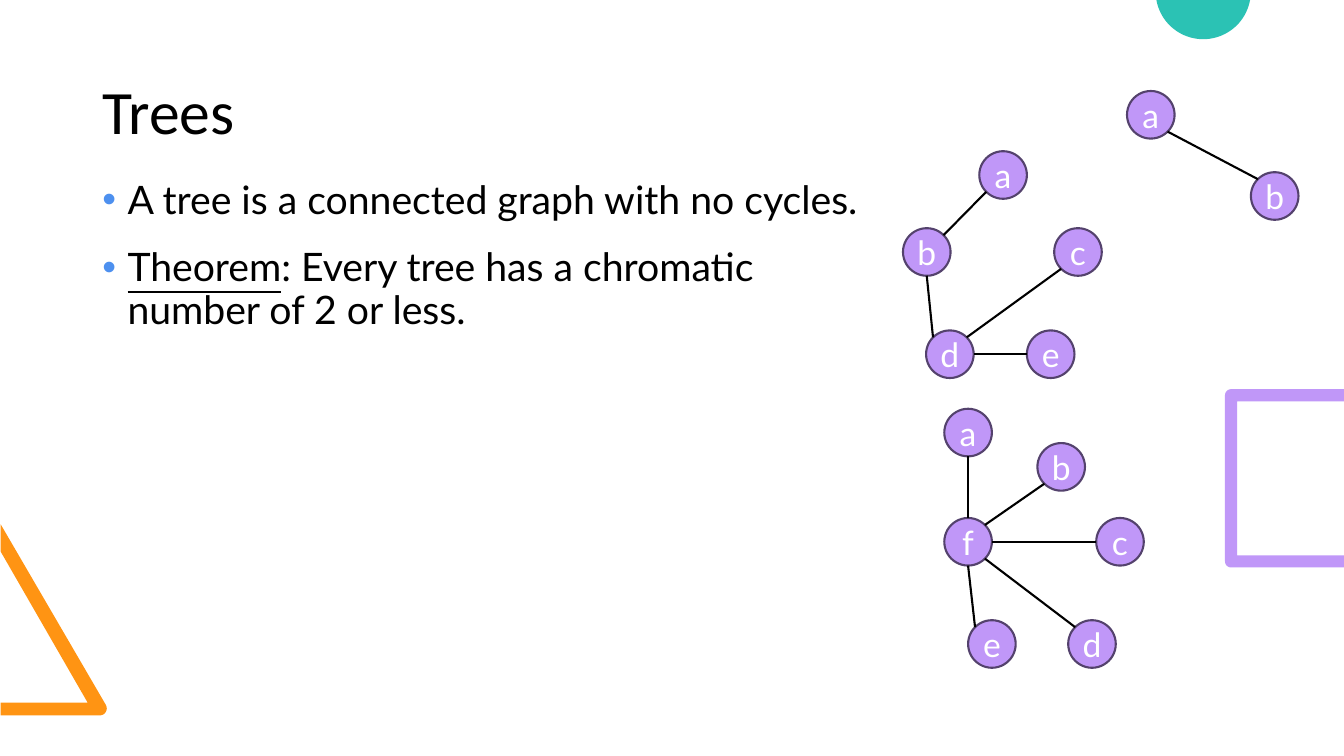
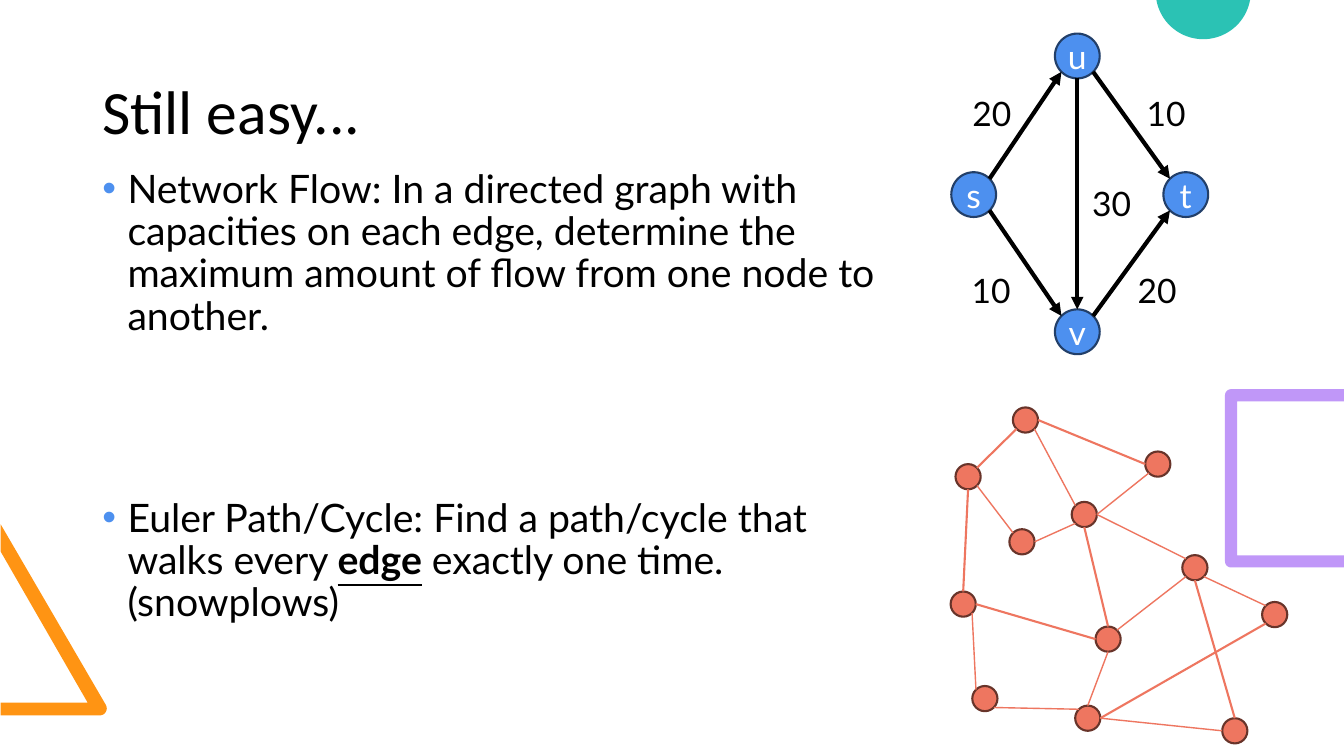
from dataclasses import dataclass
from enum import Enum
from math import cos, radians, sin

from lxml.etree import SubElement
from pptx import Presentation
from pptx.dml.color import RGBColor
from pptx.enum.shapes import MSO_CONNECTOR, MSO_SHAPE
from pptx.enum.text import MSO_ANCHOR, PP_ALIGN
from pptx.oxml.ns import qn
from pptx.slide import Slide
from pptx.text.text import TextFrame
from pptx.util import Pt

Point = tuple[float, float]


@dataclass(frozen=True)
class Theme:
    black: str = "000000"
    white: str = "FFFFFF"
    blue: str = "4D90EF"
    blue_dark: str = "223F69"
    purple: str = "C097F8"
    purple_dark: str = "54426D"
    coral: str = "EE7660"
    coral_dark: str = "68342A"
    orange: str = "FF9413"
    teal: str = "2BC2B4"
    title_font: str = "Calibri"
    body_font: str = "Lato"
    title_size: float = 44
    body_size: float = 28
    label_size: float = 24
    line_spacing: float = 0.9
    space_before: float = 10
    space_after: float = 8
    bullet_indent: float = 18


THEME = Theme()
SLIDE_WIDTH, SLIDE_HEIGHT = 960, 540


class Side(Enum):
    """Place on a node's rim where an edge ends, as a clockwise angle."""
    E = 0
    SE = 45
    S = 90
    SW = 135
    W = 180
    NW = 225
    N = 270
    NE = 315


@dataclass(frozen=True)
class NodeStyle:
    diameter: float
    fill: str
    outline: str
    labelled: bool = True


@dataclass(frozen=True)
class Edge:
    start: str
    start_side: Side
    end: str
    end_side: Side
    width: float = 1.5


@dataclass(frozen=True)
class Graph:
    style: NodeStyle
    nodes: dict[str, Point]
    edges: list[Edge]
    edge_color: str = THEME.black
    directed: bool = False


@dataclass(frozen=True)
class Span:
    text: str
    bold: bool = False
    underline: bool = False


@dataclass(frozen=True)
class Bullet:
    spans: list[Span]
    space_after: float = THEME.space_after


# Shared drawing helpers
def color(value: str) -> RGBColor:
    return RGBColor.from_string(value)


def style_run(run, size: float, font: str = THEME.body_font, ink: str = THEME.black) -> None:
    run.font.size = Pt(size)
    run.font.name = font
    run.font.color.rgb = color(ink)


def arc(center: Point, radius: float, start: int, stop: int, step: int) -> list[Point]:
    return [(center[0] + radius * cos(radians(angle)), center[1] + radius * sin(radians(angle)))
            for angle in range(start, stop + step, step)]


def add_outline(slide: Slide, points: list[Point], fill: str) -> None:
    corners = [(Pt(x), Pt(y)) for x, y in points]
    builder = slide.shapes.build_freeform(*corners[0])
    builder.add_line_segments(corners[1:], close=True)
    shape = builder.convert_to_shape()
    shape.shadow.inherit = False
    shape.fill.solid()
    shape.fill.fore_color.rgb = color(fill)
    shape.line.fill.background()


def add_text_frame(slide: Slide, left: float, top: float, width: float, height: float) -> TextFrame:
    text_frame = slide.shapes.add_textbox(Pt(left), Pt(top), Pt(width), Pt(height)).text_frame
    text_frame.word_wrap = True
    return text_frame


def add_decoration(slide: Slide) -> None:
    # Triangle at lower left
    add_outline(slide, [(0.5, 511), (0.5, 501.8), (62.6, 501.8), (0.5, 394), (0.5, 374.5),
                        *arc((71.3, 506), 5, -30, 90, 15)], THEME.orange)
    # Circle cut by the top edge
    add_outline(slide, arc((859.5, -6), 34, 10, 170, 4), THEME.teal)
    # Frame cut by the right edge
    left, top, bottom, band, radius = 875, 278, 405.4, 8.7, 4.4
    add_outline(slide, [(SLIDE_WIDTH, bottom), *arc((left + radius, bottom - radius), radius, 90, 180, 15),
                        *arc((left + radius, top + radius), radius, 180, 270, 15),
                        (SLIDE_WIDTH, top), (SLIDE_WIDTH, top + band), (left + band, top + band),
                        (left + band, bottom - band), (SLIDE_WIDTH, bottom - band)], THEME.purple)


def add_title(slide: Slide, title: str) -> None:
    text_frame = add_text_frame(slide, 66, 24, 828, 116)
    text_frame.vertical_anchor = MSO_ANCHOR.MIDDLE
    text_frame.text = title
    paragraph = text_frame.paragraphs[0]
    paragraph.line_spacing = THEME.line_spacing
    style_run(paragraph.runs[0], THEME.title_size, THEME.title_font)


def add_bullets(slide: Slide, top: float, width: float, bullets: list[Bullet]) -> None:
    text_frame = add_text_frame(slide, 66, top, width, SLIDE_HEIGHT - top)
    for index, bullet in enumerate(bullets):
        paragraph = text_frame.add_paragraph() if index else text_frame.paragraphs[0]
        paragraph.line_spacing = THEME.line_spacing
        paragraph.space_before = Pt(THEME.space_before)
        paragraph.space_after = Pt(bullet.space_after)
        properties = paragraph._p.get_or_add_pPr()
        properties.set("marL", str(Pt(THEME.bullet_indent)))
        properties.set("indent", str(-Pt(THEME.bullet_indent)))
        SubElement(SubElement(properties, qn("a:buClr")), qn("a:srgbClr"), val=THEME.blue)
        SubElement(properties, qn("a:buFont"), typeface="Arial")
        SubElement(properties, qn("a:buChar"), char="•")
        for span in bullet.spans:
            run = paragraph.add_run()
            run.text = span.text
            style_run(run, THEME.body_size)
            run.font.bold = span.bold
            run.font.underline = span.underline


def add_node(slide: Slide, label: str, center: Point, style: NodeStyle) -> None:
    radius = style.diameter / 2
    shape = slide.shapes.add_shape(MSO_SHAPE.OVAL, Pt(center[0] - radius), Pt(center[1] - radius),
                                   Pt(style.diameter), Pt(style.diameter))
    shape.shadow.inherit = False
    shape.fill.solid()
    shape.fill.fore_color.rgb = color(style.fill)
    shape.line.color.rgb = color(style.outline)
    shape.line.width = Pt(1.5)
    if not style.labelled:
        return
    text_frame = shape.text_frame
    text_frame.margin_left = text_frame.margin_right = Pt(0)
    text_frame.margin_top = text_frame.margin_bottom = Pt(0)
    text_frame.vertical_anchor = MSO_ANCHOR.MIDDLE
    text_frame.word_wrap = False
    text_frame.text = label
    text_frame.paragraphs[0].alignment = PP_ALIGN.CENTER
    style_run(text_frame.paragraphs[0].runs[0], THEME.label_size, ink=THEME.white)


def add_edge(slide: Slide, graph: Graph, edge: Edge) -> None:
    ends = []
    for name, side in ((edge.start, edge.start_side), (edge.end, edge.end_side)):
        x, y = arc(graph.nodes[name], graph.style.diameter / 2, side.value, side.value, 1)[0]
        ends += [Pt(x), Pt(y)]
    connector = slide.shapes.add_connector(MSO_CONNECTOR.STRAIGHT, *ends)
    connector.line.color.rgb = color(graph.edge_color)
    connector.line.width = Pt(edge.width)
    properties = connector.element.spPr
    if graph.directed:
        SubElement(properties.find(qn("a:ln")), qn("a:tailEnd"), type="triangle")
    SubElement(properties, qn("a:effectLst"))


def add_graph(slide: Slide, graph: Graph) -> None:
    for name, center in graph.nodes.items():
        add_node(slide, name, center, graph.style)
    for edge in graph.edges:
        add_edge(slide, graph, edge)


def add_capacity(slide: Slide, text: str, center: Point) -> None:
    width, height = 48, 36
    text_frame = add_text_frame(slide, center[0] - width / 2, center[1] - height / 2, width, height)
    text_frame.text = text
    text_frame.paragraphs[0].alignment = PP_ALIGN.CENTER
    style_run(text_frame.paragraphs[0].runs[0], THEME.label_size)


# Graphs
TREE_NODE = NodeStyle(34, THEME.purple, THEME.purple_dark)
FLOW_NODE = NodeStyle(32, THEME.blue, THEME.blue_dark)
EULER_NODE = NodeStyle(18, THEME.coral, THEME.coral_dark, labelled=False)

TREES = [
    Graph(TREE_NODE,
          {"a": (716.5, 125), "b": (662, 180), "c": (770, 180), "d": (678.5, 253), "e": (750.5, 253)},
          [Edge("a", Side.SW, "b", Side.NE), Edge("b", Side.S, "d", Side.NW),
           Edge("e", Side.W, "d", Side.E), Edge("c", Side.SW, "d", Side.NE)]),
    Graph(TREE_NODE, {"a": (822, 82), "b": (910.5, 140)}, [Edge("a", Side.SE, "b", Side.NW)]),
    Graph(TREE_NODE,
          {"a": (691.5, 309), "b": (758, 333.5), "c": (800, 387),
           "d": (780, 460), "e": (708.5, 460), "f": (691.5, 387)},
          [Edge("a", Side.S, "f", Side.N), Edge("b", Side.SW, "f", Side.NE),
           Edge("c", Side.W, "f", Side.E), Edge("d", Side.NW, "f", Side.SE),
           Edge("f", Side.S, "e", Side.NW)]),
]

NETWORK = Graph(
    FLOW_NODE, {"s": (695.5, 139), "u": (769.5, 40), "v": (769.5, 237), "t": (847, 139)},
    [Edge("s", Side.NE, "u", Side.SW, 3), Edge("s", Side.SE, "v", Side.NW, 3),
     Edge("u", Side.SE, "t", Side.NW, 3), Edge("v", Side.NE, "t", Side.SW, 3),
     Edge("u", Side.S, "v", Side.N, 3)], directed=True)
CAPACITIES = [("20", (708.5, 81)), ("10", (833, 81)), ("10", (708, 207)),
              ("20", (826.5, 207)), ("30", (794, 145))]

EULER = Graph(
    EULER_NODE,
    {"top": (732.5, 300), "upper right": (827, 331.5), "upper left": (691.5, 340.5),
     "hub": (774.5, 367.5), "inner": (730, 387), "east": (853.5, 405.5),
     "west": (688, 431.5), "far east": (910.5, 439), "middle": (791.5, 456.5),
     "lower left": (703.5, 499), "low": (777, 513), "lower right": (882, 522)},
    [Edge("upper left", Side.S, "west", Side.N), Edge("upper left", Side.NE, "top", Side.SW),
     Edge("top", Side.E, "upper right", Side.W), Edge("hub", Side.E, "upper right", Side.SW, 1),
     Edge("hub", Side.E, "east", Side.NW, 1), Edge("east", Side.SE, "far east", Side.NW, 1),
     Edge("middle", Side.NE, "east", Side.SW, 1), Edge("hub", Side.SW, "inner", Side.E, 1),
     Edge("upper left", Side.SE, "inner", Side.NW, 1), Edge("hub", Side.S, "middle", Side.N),
     Edge("middle", Side.S, "low", Side.N, 1), Edge("low", Side.E, "far east", Side.SW),
     Edge("east", Side.S, "lower right", Side.N), Edge("low", Side.E, "lower right", Side.W, 1),
     Edge("lower left", Side.SE, "low", Side.NW, 1), Edge("west", Side.SE, "lower left", Side.NW, 1),
     Edge("middle", Side.W, "west", Side.E), Edge("hub", Side.NW, "top", Side.SE, 1)],
    edge_color=THEME.coral)


# Slides
def add_base_slide(presentation, title: str) -> Slide:
    slide = presentation.slides.add_slide(presentation.slide_layouts[6])
    add_decoration(slide)
    add_title(slide, title)
    return slide


def add_trees_slide(presentation) -> None:
    slide = add_base_slide(presentation, "Trees")
    add_bullets(slide, 125.3, 580, [
        Bullet([Span("A tree is a connected graph with no cycles.")]),
        Bullet([Span("Theorem", underline=True),
                Span(": Every tree has a chromatic number of 2 or less.")])])
    for tree in TREES:
        add_graph(slide, tree)


def add_easy_slide(presentation) -> None:
    slide = add_base_slide(presentation, "Still easy...")
    add_bullets(slide, 117.4, 577.5, [
        Bullet([Span("Network Flow: In a directed graph with capacities on each edge, determine "
                     "the maximum amount of flow from one node to another.")], space_after=104),
        Bullet([Span("Euler Path/Cycle: Find a path/cycle that walks every "),
                Span("edge", bold=True, underline=True),
                Span(" exactly one time. (snowplows)")])])
    add_graph(slide, EULER)
    add_graph(slide, NETWORK)
    for text, center in CAPACITIES:
        add_capacity(slide, text, center)


def main() -> None:
    presentation = Presentation()
    presentation.slide_width, presentation.slide_height = Pt(SLIDE_WIDTH), Pt(SLIDE_HEIGHT)
    add_trees_slide(presentation)
    add_easy_slide(presentation)
    presentation.save("out.pptx")


if __name__ == "__main__":
    main()
